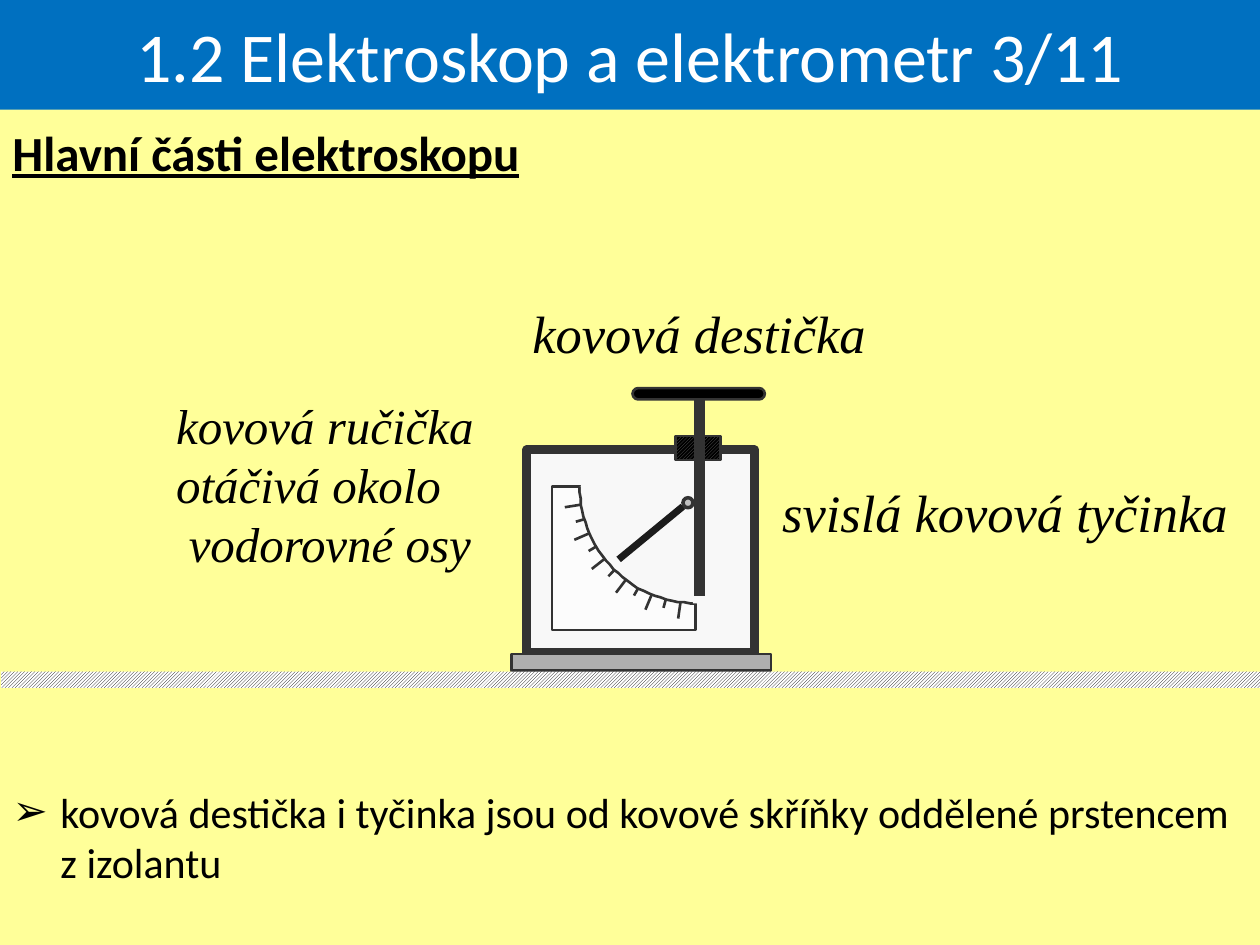
import math
from lxml import etree
from pptx import Presentation, util as u
from pptx.dml.color import RGBColor
from pptx.enum import dml, shapes, text
from pptx.oxml.ns import qn

PX = 9144  # EMU in one px, 100 px to the inch
hue = RGBColor.from_string
KIND = shapes.MSO_SHAPE

deck = Presentation()
deck.slide_width, deck.slide_height = 1000 * PX, 750 * PX
slide = deck.slides.add_slide(deck.slide_layouts[1])
slide.background.fill.solid()
slide.background.fill.fore_color.rgb = hue("FFFF99")
parts = slide.shapes


def box(kind, left, top, wide, high, fill, edge=None, width=1.5):
    item = parts.add_shape(kind, left * PX, top * PX, wide * PX, high * PX)
    item.shadow.inherit = False
    item.fill.solid()
    item.fill.fore_color.rgb = hue(fill)
    if edge:
        item.line.color.rgb = hue(edge)
        item.line.width = u.Pt(width)
    else:
        item.line.fill.background()
    return item


def stroke(x1, y1, x2, y2, color="333333", width=1.5):
    ends = [round(n * PX) for n in (x1, y1, x2, y2)]
    line = parts.add_connector(shapes.MSO_CONNECTOR.STRAIGHT, *ends)
    line.line.color.rgb = hue(color)
    line.line.width = u.Pt(width)
    etree.SubElement(line._element.spPr, qn("a:effectLst"))


# Title bar
title = parts.title
title.left, title.top, title.width, title.height = 0, 0, 1000 * PX, 87 * PX
title.fill.solid()
title.fill.fore_color.rgb = hue("0070C0")
frame = title.text_frame
frame.text = "1.2 Elektroskop a elektrometr 3/11"
frame.vertical_anchor = text.MSO_ANCHOR.MIDDLE
font = frame.paragraphs[0].font
font.name, font.size, font.color.rgb = "Calibri", u.Pt(40), hue("FFFFFF")

# Bullet list
body = slide.placeholders[1]
body.left, body.top, body.width, body.height = 0, 619 * PX, 1001 * PX, 91 * PX
body.text_frame.text = ("kovová destička i tyčinka jsou od kovové skříňky "
                        "oddělené prstencem z izolantu")
para = body.text_frame.paragraphs[0]
para.space_before = u.Pt(0)
para.font.name, para.font.size = "Calibri", u.Pt(24)
para.font.color.rgb = hue("000000")
props = para._p.get_or_add_pPr()
props.set("marL", str(38 * PX))
props.set("indent", str(-38 * PX))
etree.SubElement(props, qn("a:buChar")).set("char", "➢")
props.append(props.find(qn("a:defRPr")))  # the schema wants it last

# Case, base and scale plate
box(KIND.RECTANGLE, 418, 357, 181, 161, "F8F8F8", "333333", 5)
box(KIND.RECTANGLE, 406, 519, 206, 13, "AFAFAF", "333333")
plate = box(KIND.RECTANGLE, 438, 386, 114, 114, "FFFFFF", "333333")
tint = plate._element.spPr.find(qn("a:solidFill"))[0]
etree.SubElement(tint, qn("a:alpha")).set("val", "58000")

# Quarter circle cut out of the plate, with its rim
MIDX, MIDY, RAD = 553, 386, 93
rim = [(MIDX - RAD * math.sin(math.radians(a)),
        MIDY + RAD * math.cos(math.radians(a))) for a in range(0, 91, 3)]
for dots, shut in ((rim + [(MIDX, MIDY)], True), (rim, False)):
    pen = parts.build_freeform(*dots[0], scale=PX)
    pen.add_line_segments(dots[1:], close=shut)
    arc = pen.convert_to_shape()
    arc.shadow.inherit = False
    if shut:
        arc.fill.solid()
        arc.fill.fore_color.rgb = hue("F8F8F8")
        arc.line.fill.background()
    else:
        arc.fill.background()
        arc.line.color.rgb = hue("333333")
        arc.line.width = u.Pt(1.5)
box(KIND.RECTANGLE, 461, 384, 90, 7, "F8F8F8")

# Scale ticks, long and short by turns
for i in range(11):
    turn = math.radians(8 + 7.3 * i)
    dx, dy = -math.sin(turn), math.cos(turn)
    far = RAD + (7 if i % 2 else 13)
    stroke(MIDX + RAD * dx, MIDY + RAD * dy, MIDX + far * dx, MIDY + far * dy)
box(KIND.RECTANGLE, 550, 389, 7, 90, "F8F8F8")

# Insulating ring, rod, top plate, pivot, ground and needle
ring = box(KIND.RECTANGLE, 536, 346, 36, 19, "000000", "333333")
stroke(555, 315, 555, 473, width=6)
disc = box(KIND.ROUNDED_RECTANGLE, 502, 308, 105, 9, "000000", "333333")
disc.adjustments[0] = 0.5
box(KIND.OVAL, 542, 395, 8, 8, "C0C0C0", "333333", 2)
ground = box(KIND.RECTANGLE, 1, 533, 1000, 13, "FFFFFF")
for item, fore, back in ((ring, "5F5F5F", "000000"),
                         (ground, "000000", "FFFFFF")):
    item.fill.patterned()
    item.fill.pattern = dml.MSO_PATTERN.DARK_UPWARD_DIAGONAL
    item.fill.fore_color.rgb = hue(fore)
    item.fill.back_color.rgb = hue(back)
stroke(542, 402, 491, 444, "1C1C1C", 4)

# Heading and part labels
ALIGN = text.PP_ALIGN
SERIF = "Times New Roman"
labels = [
    (0, 92, 1001, 57, "Hlavní části elektroskopu", "Calibri", 28, ALIGN.LEFT),
    (611, 376, 375, 60, "svislá kovová tyčinka", SERIF, 30, ALIGN.LEFT),
    (411, 234, 288, 61, "kovová destička", SERIF, 30, ALIGN.CENTER),
    (130, 309, 260, 150, "kovová ručička\notáčivá okolo\nvodorovné osy",
     SERIF, 28, ALIGN.JUSTIFY),
]
for left, top, wide, high, words, face, size, align in labels:
    note = parts.add_textbox(left * PX, top * PX, wide * PX, high * PX)
    frame = note.text_frame
    frame.text = words
    head = face == "Calibri"
    frame.word_wrap = head
    frame.auto_size = text.MSO_AUTO_SIZE.SHAPE_TO_FIT_TEXT
    for para in frame.paragraphs:
        para.alignment = align
        font = para.font
        font.name, font.size, font.color.rgb = face, u.Pt(size), hue("000000")
        font.bold, font.underline, font.italic = head, head, not head
# The last line of the needle label is set in a little
para._p.get_or_add_pPr().set("marL", str(10 * PX))

deck.save("out.pptx")
